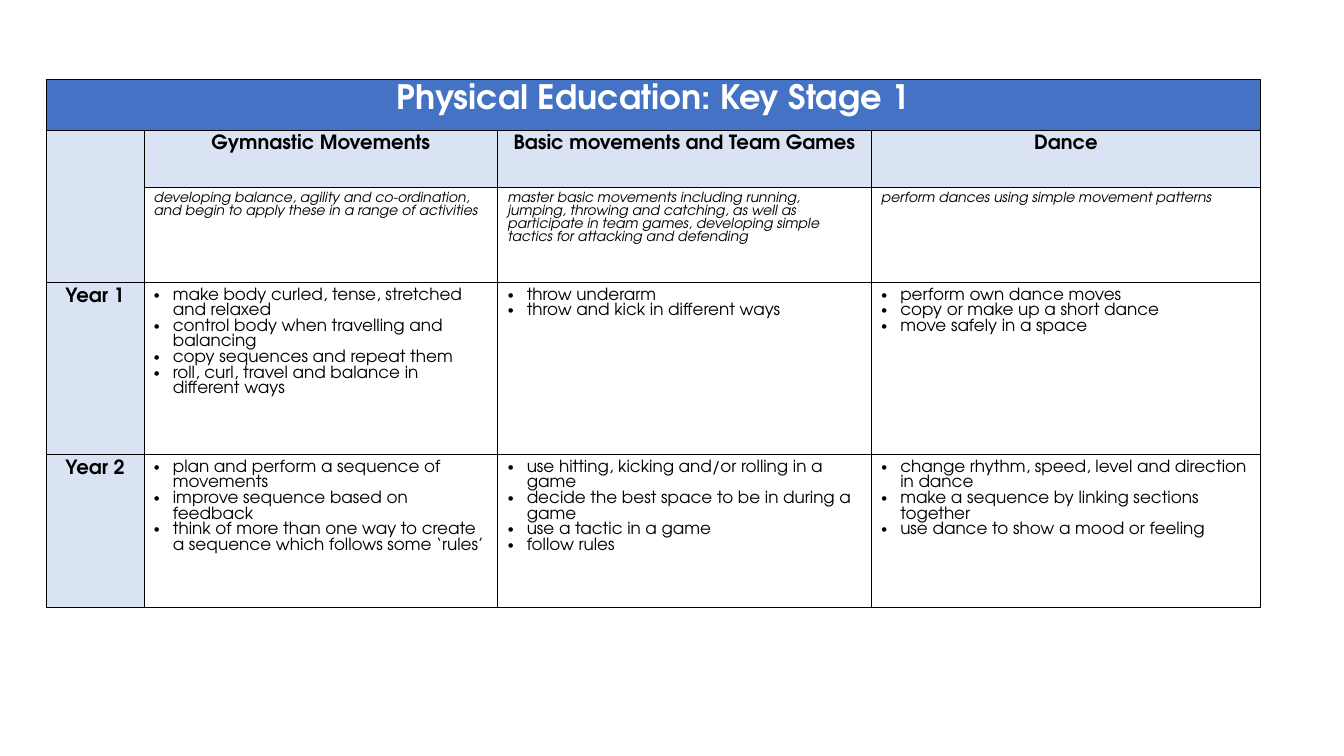
from dataclasses import dataclass

from lxml import etree
from pptx import Presentation
from pptx.dml.color import RGBColor
from pptx.enum.text import PP_ALIGN
from pptx.oxml.ns import qn
from pptx.table import _Cell
from pptx.util import Pt

LEFT = PP_ALIGN.LEFT
CENTER = PP_ALIGN.CENTER
FONT = "TeX Gyre Adventor"
BLACK = "000000"
WHITE = "FFFFFF"
BLUE = "4472C4"
PALE_BLUE = "DAE3F3"
BORDER_WIDTH = 0.5
BULLET_INDENT = 13.5
TABLE_LEFT, TABLE_TOP = 33, 56.7
COLUMN_WIDTHS = [69.8, 252.8, 266.8, 278.2]
ROW_HEIGHTS = [36.2, 41.2, 67.8, 122.9, 109]


@dataclass(frozen=True)
class Style:
    size: float
    bold: bool = False
    italic: bool = False
    color: str = BLACK
    fill: str | None = None
    align: PP_ALIGN = LEFT
    bullet: bool = False


TITLE = Style(24, bold=True, color=WHITE, fill=BLUE, align=CENTER)
HEADING = Style(14, bold=True, fill=PALE_BLUE, align=CENTER)
AIM = Style(10, italic=True)
SKILLS = Style(12, bullet=True)


@dataclass(frozen=True)
class Entry:
    row: int
    column: int
    style: Style
    lines: list[str]


AREAS = ["Gymnastic Movements", "Basic movements and Team Games", "Dance"]
AIMS = [
    "developing balance, agility and co-ordination, and begin to apply these in a range of activities",
    "master basic movements including running, jumping, throwing and catching, as well as "
    "participate in team games, developing simple tactics for attacking and defending",
    "perform dances using simple movement patterns",
]
YEARS = {
    "Year 1": [
        [
            "make body curled, tense, stretched and relaxed",
            "control body when travelling and balancing",
            "copy sequences and repeat them",
            "roll, curl, travel and balance in different ways",
        ],
        ["throw underarm", "throw and kick in different ways"],
        ["perform own dance moves", "copy or make up a short dance", "move safely in a space"],
    ],
    "Year 2": [
        [
            "plan and perform a sequence of movements",
            "improve sequence based on feedback",
            "think of more than one way to create a sequence which follows some ‘rules’",
        ],
        [
            "use hitting, kicking and/or rolling in a game",
            "decide the best space to be in during a game",
            "use a tactic in a game",
            "follow rules",
        ],
        [
            "change rhythm, speed, level and direction in dance",
            "make a sequence by linking sections together",
            "use dance to show a mood or feeling",
        ],
    ],
}


def rgb(color: str) -> RGBColor:
    return RGBColor.from_string(color)


def add_borders(cell: _Cell) -> None:
    properties = cell._tc.get_or_add_tcPr()
    for side in ("a:lnL", "a:lnR", "a:lnT", "a:lnB"):
        line = etree.SubElement(properties, qn(side), w=str(Pt(BORDER_WIDTH)))
        solid = etree.SubElement(line, qn("a:solidFill"))
        etree.SubElement(solid, qn("a:srgbClr"), val=BLACK)


def fill_cell(cell: _Cell, color: str | None) -> None:
    if color is None:
        cell.fill.background()
    else:
        cell.fill.solid()
        cell.fill.fore_color.rgb = rgb(color)


def write_cell(cell: _Cell, lines: list[str], style: Style) -> None:
    fill_cell(cell, style.fill)
    font_format = {"name": FONT, "size": Pt(style.size), "bold": style.bold, "italic": style.italic}
    cell.text_frame.text = "\n".join(lines)
    for para in cell.text_frame.paragraphs:
        para.alignment = style.align
        if style.bullet:
            properties = para._p.get_or_add_pPr()
            properties.set("marL", str(Pt(BULLET_INDENT)))
            properties.set("indent", str(-Pt(BULLET_INDENT)))
            etree.SubElement(properties, qn("a:buFont"), typeface="Arial")
            etree.SubElement(properties, qn("a:buChar"), char="•")
        for span in para.runs:
            for name, value in font_format.items():
                setattr(span.font, name, value)
            span.font.color.rgb = rgb(style.color)


def list_entries() -> list[Entry]:
    entries = [Entry(0, 0, TITLE, ["Physical Education: Key Stage 1"])]
    for column, (area, aim) in enumerate(zip(AREAS, AIMS), start=1):
        entries.append(Entry(1, column, HEADING, [area]))
        entries.append(Entry(2, column, AIM, [aim]))
    for row, (year, skills) in enumerate(YEARS.items(), start=3):
        entries.append(Entry(row, 0, HEADING, [year]))
        for column, lines in enumerate(skills, start=1):
            entries.append(Entry(row, column, SKILLS, lines))
    return entries


def main() -> None:
    deck = Presentation()
    deck.slide_width, deck.slide_height = Pt(960), Pt(540)
    page = deck.slides.add_slide(deck.slide_layouts[6])
    table = page.shapes.add_table(
        len(ROW_HEIGHTS), len(COLUMN_WIDTHS), Pt(TABLE_LEFT), Pt(TABLE_TOP),
        Pt(sum(COLUMN_WIDTHS)), Pt(sum(ROW_HEIGHTS)),
    ).table
    table.first_row = table.horz_banding = False
    for column, width in zip(table.columns, COLUMN_WIDTHS):
        column.width = Pt(width)
    for row, height in zip(table.rows, ROW_HEIGHTS):
        row.height = Pt(height)
    for cell in table.iter_cells():
        add_borders(cell)
    table.cell(0, 0).merge(table.cell(0, len(COLUMN_WIDTHS) - 1))
    table.cell(1, 0).merge(table.cell(2, 0))
    fill_cell(table.cell(1, 0), PALE_BLUE)
    for entry in list_entries():
        write_cell(table.cell(entry.row, entry.column), entry.lines, entry.style)
    deck.save("out.pptx")


if __name__ == "__main__":
    main()
